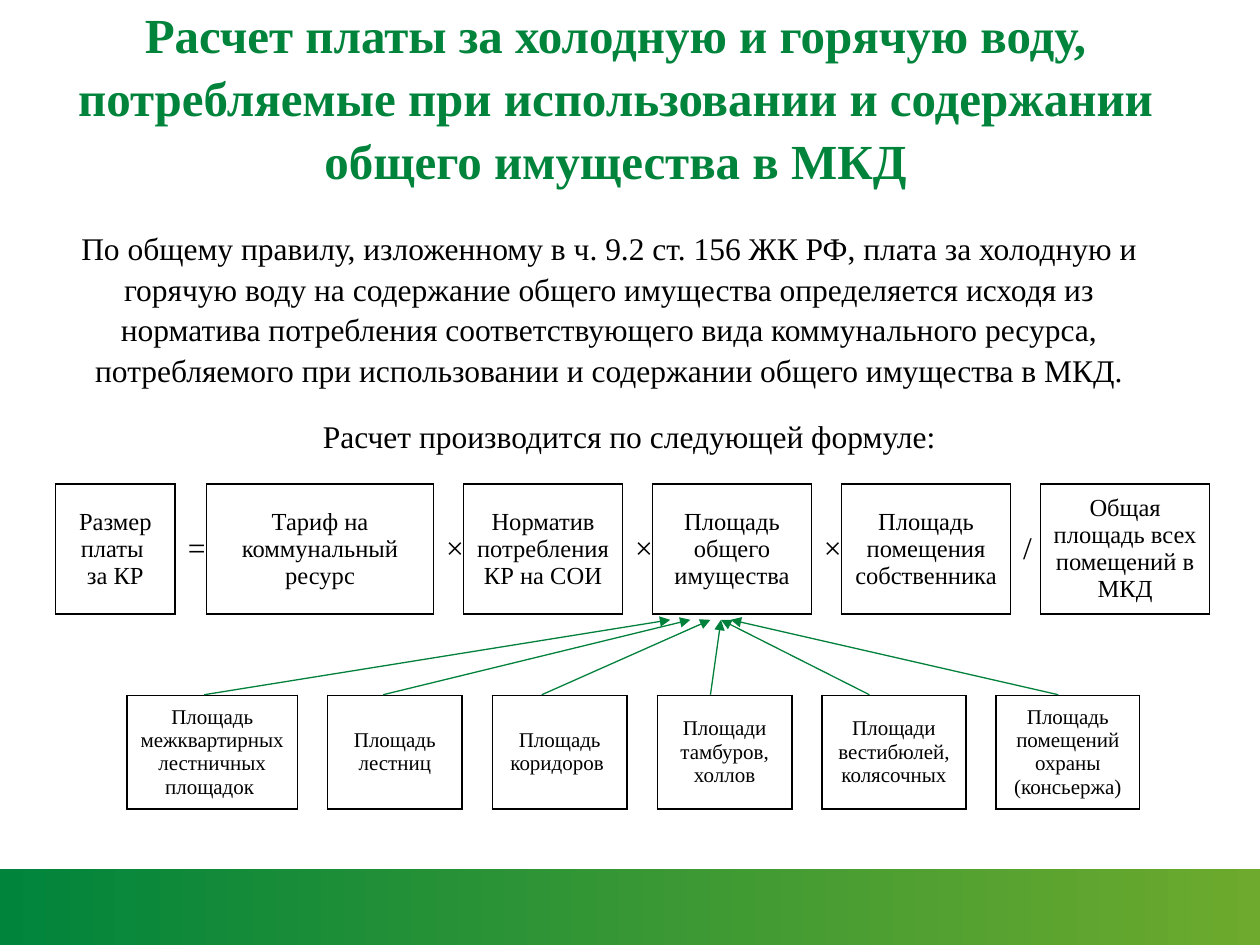
from dataclasses import dataclass

from lxml import etree
from pptx import Presentation
from pptx.dml.color import RGBColor
from pptx.enum import shapes, text
from pptx.oxml import ns
from pptx.util import Pt


@dataclass(frozen=True)
class Theme:
    font: str = "Times New Roman"
    green: str = "00843C"
    lime: str = "6DAA2D"
    arrow: str = "00813B"
    ink: str = "000000"
    title: int = 28
    body: int = 18
    term: int = 14
    area: int = 12


T = Theme()
rgb = RGBColor.from_string

# Formula row: (text, width); operators sit in the narrow columns
TERMS = [
    ("Размер платы \nза КР", 68.4), ("=", 18),
    ("Тариф на коммунальный ресурс", 129.6), ("×", 17.3),
    ("Норматив потребления КР на СОИ", 90.7), ("×", 17.3),
    ("Площадь общего имущества", 90.7), ("×", 17.3),
    ("Площадь помещения собственника", 96.5), ("/", 17.3),
    ("Общая площадь всех помещений в МКД", 96.5),
]
GAP = ("", 16.7)
AREAS = [
    ("Площадь межквартирных лестничных площадок ", 97.2), GAP,
    ("Площадь лестниц", 77), GAP,
    ("Площадь коридоров ", 77), GAP,
    ("Площади тамбуров, холлов", 77), GAP,
    ("Площади вестибюлей, колясочных", 82.1), GAP,
    ("Площадь помещений охраны (консьержа)", 82.1),
]
# Each arrow: x at the areas row, x at the formula row
ARROWS = [(116.6, 383), (218.9, 394.5), (309.6, 406),
          (406, 412), (496.8, 412), (604.8, 417.6)]


def write(frame, words, size, color=T.ink, bold=False, space=None):
    para = frame.paragraphs[0]
    para.alignment = text.PP_ALIGN.CENTER
    if space:
        para.line_spacing = space
    for i, line in enumerate(words.split("\n")):
        if i:
            para.add_line_break()
        run = para.add_run()
        run.text = line
        font = run.font
        font.name, font.size, font.bold = T.font, Pt(size), bold
        font.color.rgb = rgb(color)


def block(slide, box, words, size, color=T.ink, bold=False,
          anchor=text.MSO_ANCHOR.TOP):
    frame = slide.shapes.add_textbox(*map(Pt, box)).text_frame
    frame.word_wrap = True
    frame.vertical_anchor = anchor
    write(frame, words, size, color, bold, 1.07)


def edge(cell, sides, on):
    """Draw or hide the given borders (letters of L, R, T, B) of a cell."""
    props = cell._tc.get_or_add_tcPr()
    for side in sides:
        line = etree.SubElement(props, ns.qn(f"a:ln{side}"), w=str(Pt(1)))
        if on:
            fill = etree.SubElement(line, ns.qn("a:solidFill"))
            etree.SubElement(fill, ns.qn("a:srgbClr"), val=T.ink)
        else:
            etree.SubElement(line, ns.qn("a:noFill"))


def chain(slide, left, top, high, items, size):
    """Row of framed cells, with open cells between them."""
    wide = sum(width for _, width in items)
    table = slide.shapes.add_table(
        1, len(items), Pt(left), Pt(top), Pt(wide), Pt(high)).table
    table.first_row = table.horz_banding = False
    for i, (words, width) in enumerate(items):
        table.columns[i].width = Pt(width)
        cell = table.cell(0, i)
        framed = i % 2 == 0
        edge(cell, "LR", True)
        edge(cell, "TB", framed)
        cell.fill.background()
        cell.vertical_anchor = text.MSO_ANCHOR.MIDDLE
        if words:
            write(cell.text_frame, words, size if framed else T.body)


def fan(slide, low, high):
    """Arrows from the areas up to the common area."""
    for start, end in ARROWS:
        line = slide.shapes.add_connector(
            shapes.MSO_CONNECTOR.STRAIGHT, Pt(start), Pt(low), Pt(end), Pt(high))
        line.line.color.rgb = rgb(T.arrow)
        line.line.width = Pt(0.75)
        props = line._element.spPr
        etree.SubElement(props.find(ns.qn("a:ln")), ns.qn("a:tailEnd"),
                         type="triangle")
        etree.SubElement(props, ns.qn("a:effectLst"))


def band(slide, box):
    bar = slide.shapes.add_shape(shapes.MSO_SHAPE.RECTANGLE, *map(Pt, box))
    bar.shadow.inherit = False
    bar.line.fill.background()
    bar.fill.gradient()
    bar.fill.gradient_angle = 0
    for stop, color in zip(bar.fill.gradient_stops, (T.green, T.lime)):
        stop.color.rgb = rgb(color)


def main():
    deck = Presentation()
    deck.slide_width, deck.slide_height = Pt(720), Pt(540)
    slide = deck.slides.add_slide(deck.slide_layouts[6])
    block(slide, (14.4, 0, 674.6, 108.7),
          "Расчет платы за холодную и горячую воду, потребляемые при "
          "использовании и содержании общего имущества в МКД",
          T.title, T.green, True, text.MSO_ANCHOR.MIDDLE)
    block(slide, (31.7, 126, 632.9, 94.3),
          "По общему правилу, изложенному в ч. 9.2 ст. 156 ЖК РФ, плата за "
          "холодную и горячую воду на содержание общего имущества "
          "определяется исходя из норматива потребления соответствующего "
          "вида коммунального ресурса, потребляемого при использовании и "
          "содержании общего имущества в МКД.", T.body)
    block(slide, (43.2, 233.3, 632.9, 28.8),
          "Расчет производится по следующей формуле:", T.body)
    band(slide, (0, 496.4, 720, 44))
    chain(slide, 31.7, 276.5, 74.2, TERMS, T.term)
    chain(slide, 72.7, 397.4, 64.8, AREAS, T.area)
    fan(slide, 397, 354.2)
    deck.save("out.pptx")


if __name__ == "__main__":
    main()
